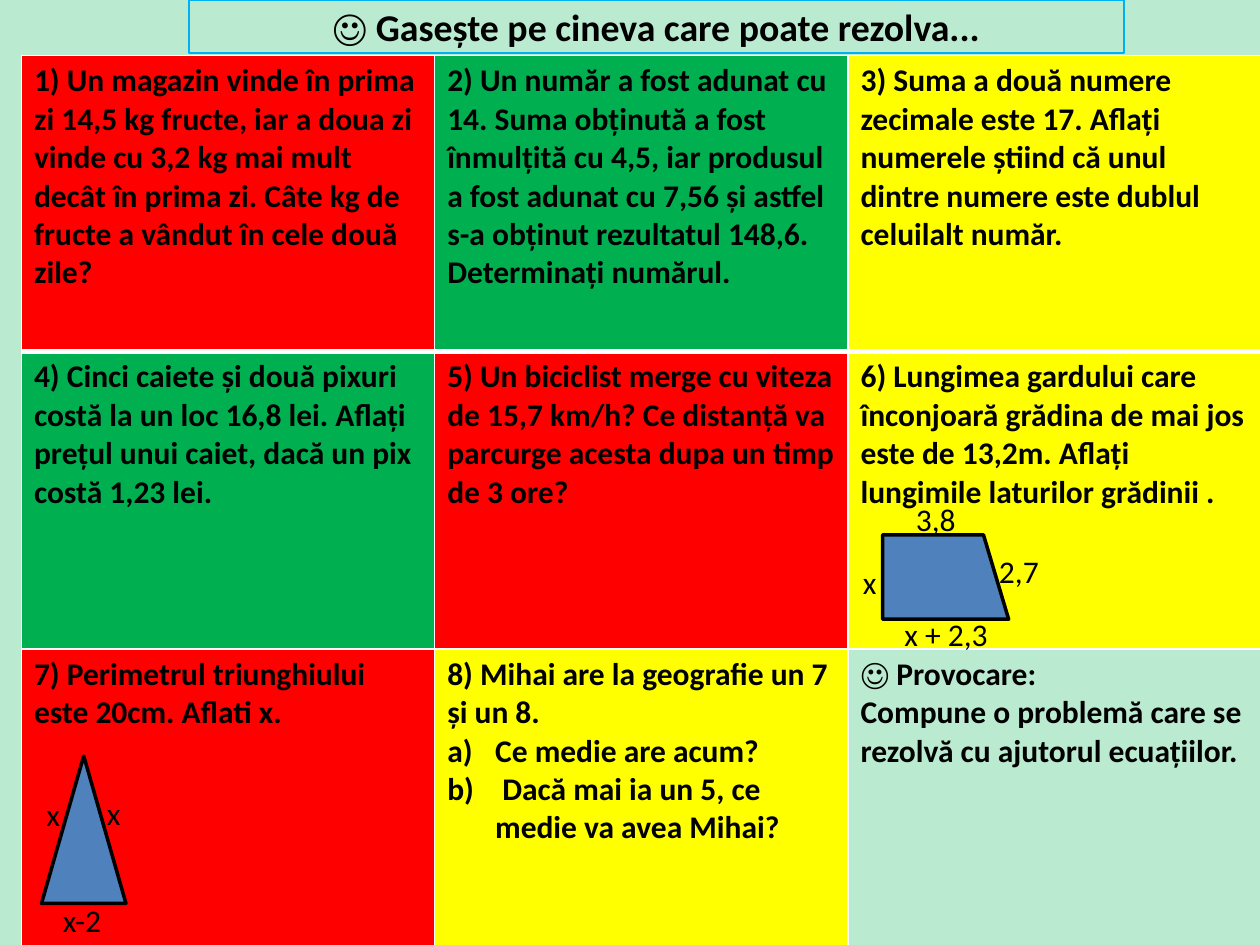
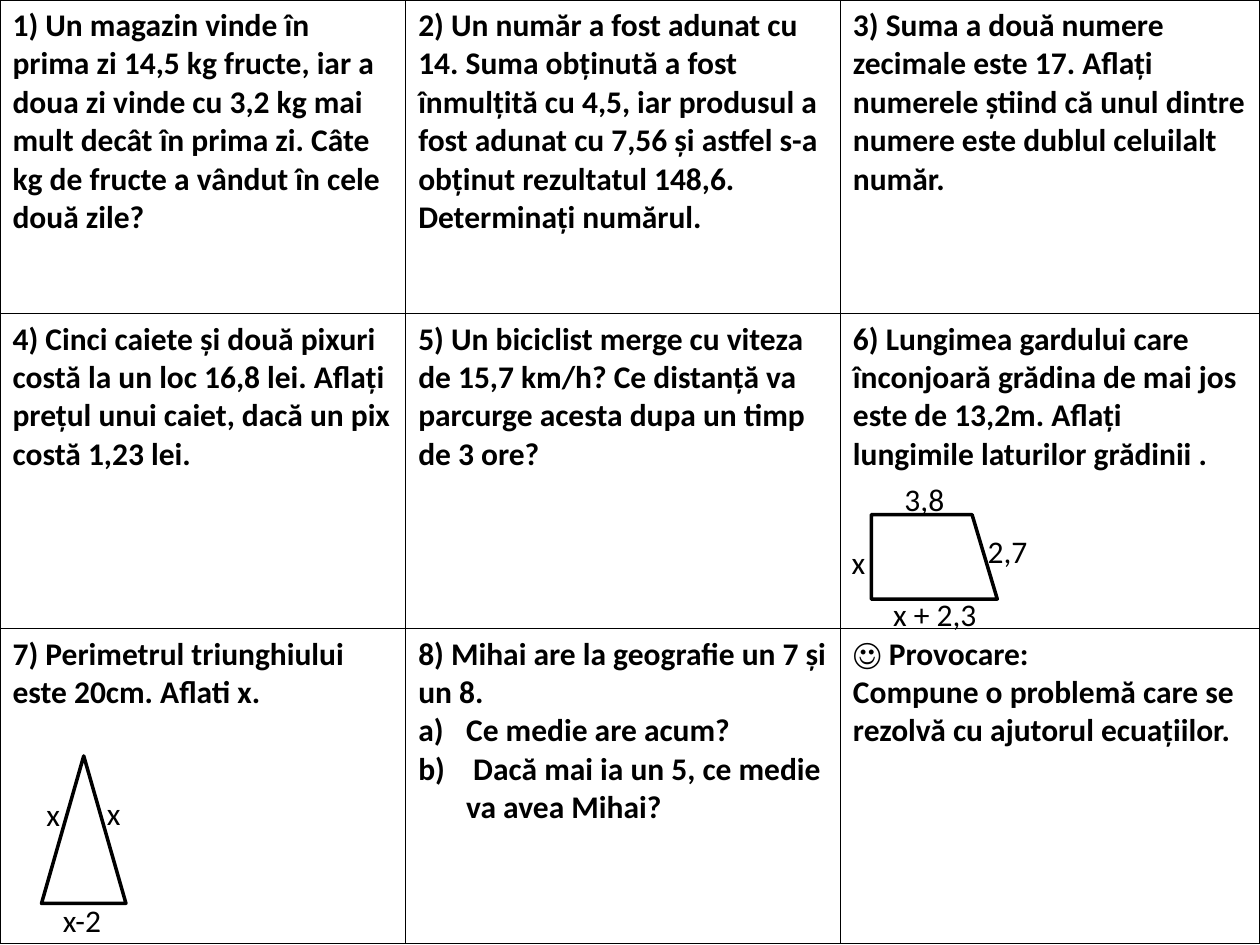
from dataclasses import dataclass
from itertools import product

from lxml.etree import SubElement
from pptx import Presentation
from pptx.dml.color import RGBColor
from pptx.enum.shapes import MSO_SHAPE as Preset
from pptx.enum.text import MSO_ANCHOR as Anchor, MSO_AUTO_SIZE as AutoSize, PP_ALIGN as Align
from pptx.oxml.ns import qn
from pptx.util import Emu, Pt

PX = 9144  # 100 px to the inch
FONT = "Calibri"
BLACK, WHITE, BLUE, SKY = "000000", "FFFFFF", "4F81BD", "00B0F0"
RED, GREEN, YELLOW, MINT = "FF0000", "00B050", "FFFF00", "BAEAD0"
LIST_INDENT = 38

TASKS = [
    ["1) Un magazin vinde în prima zi 14,5 kg fructe, iar a doua zi vinde cu 3,2 kg mai mult "
     "decât în prima zi. Câte kg de fructe a vândut în cele două zile?"],
    ["2) Un număr a fost adunat cu 14. Suma obținută a fost înmulțită cu 4,5, iar produsul a fost "
     "adunat cu 7,56 și astfel s-a obținut rezultatul 148,6. Determinați numărul."],
    ["3) Suma a două numere zecimale este 17. Aflați numerele știind că unul dintre numere este "
     "dublul celuilalt număr."],
    ["4) Cinci caiete și două pixuri costă la un loc 16,8 lei. Aflați prețul unui caiet, dacă un "
     "pix costă 1,23 lei."],
    ["5) Un biciclist merge cu viteza de 15,7 km/h? Ce distanță va parcurge acesta dupa un timp "
     "de 3 ore?"],
    ["6) Lungimea gardului care înconjoară grădina de mai jos este de 13,2m. Aflați lungimile "
     "laturilor grădinii ."],
    ["7) Perimetrul triunghiului este 20cm. Aflati x."],
    ["8) Mihai are la geografie un 7 și un 8.",
     "Ce medie are acum?",
     " Dacă mai ia un 5, ce medie va avea Mihai?"],
    ["☺ Provocare:", "Compune o problemă care se rezolvă cu ajutorul ecuațiilor."],
]
LETTERED_TASK = 7  # its paragraphs after the first are a), b)


@dataclass(frozen=True)
class Label:
    text: str
    dx: int
    dy: int
    width: int


@dataclass(frozen=True)
class Figure:
    preset: Preset
    width: int
    height: int
    rotation: int
    labels: tuple[Label, ...]


@dataclass(frozen=True)
class Board:
    """One worksheet: its grid, colours and figure places."""
    background: str
    left: int
    top: int
    columns: tuple[int, ...]
    rows: tuple[int, ...]
    fills: tuple[str | None, ...]
    border: str
    header_rule: int
    figure_fill: str | None
    garden_at: tuple[int, int]
    triangle_at: tuple[int, int] = (33, 600)


GARDEN = Figure(Preset.FLOWCHART_MANUAL_INPUT, 67, 100, 90, (
    Label("x", -42, 34, 31),
    Label("3,8", 0, -16, 52),
    Label("x + 2,3", -9, 75, 87),
    Label("2,7", 66, 25, 52),
))
TRIANGLE = Figure(Preset.ISOSCELES_TRIANGLE, 67, 117, 0, (
    Label("x", -6, 26, 31),
    Label("x", 42, 25, 31),
    Label("x-2", 7, 110, 52),
))

COLOUR_BOARD = Board(MINT, 17, 44, (328, 328, 328), (235, 236, 236),
                     (RED, GREEN, YELLOW, GREEN, RED, YELLOW, RED, YELLOW, None),
                     WHITE, 3, BLUE, (717, 408))
PRINT_BOARD = Board(WHITE, 0, 0, (322, 345, 333), (249, 250, 250),
                    (None,) * 9, BLACK, 1, None, (708, 392))


def px(length: int) -> Emu:
    return Emu(length * PX)


def colour(value: str) -> RGBColor:
    return RGBColor.from_string(value)


def paint(fill, value: str | None) -> None:
    if value is None:
        fill.background()
    else:
        fill.solid()
        fill.fore_color.rgb = colour(value)


def style(para, size: float, bold: bool = False, align=Align.LEFT) -> None:
    para.alignment = align
    font = para.font
    font.name, font.size, font.bold = FONT, Pt(size), bold
    font.color.rgb = colour(BLACK)


def letter(para) -> None:
    """Number the paragraph a), b), ... with a hanging indent."""
    props = para._p.get_or_add_pPr()
    props.set("marL", str(px(LIST_INDENT)))
    props.set("indent", str(-px(LIST_INDENT)))
    number = props.makeelement(qn("a:buAutoNum"), {"type": "alphaLcParenR"})
    props.insert(0, number)


def add_borders(cell, value: str, top: int, bottom: int) -> None:
    props = cell._tc.get_or_add_tcPr()
    for side, points in (("L", 1), ("R", 1), ("T", top), ("B", bottom)):
        line = SubElement(props, qn(f"a:ln{side}"), w=str(Pt(points)))
        solid = SubElement(line, qn("a:solidFill"))
        SubElement(solid, qn("a:srgbClr"), val=value)


def add_tasks(page, board: Board) -> None:
    frame = page.shapes.add_table(
        len(board.rows), len(board.columns), px(board.left), px(board.top),
        px(sum(board.columns)), px(sum(board.rows)))
    table = frame.table
    table.first_row = table.horz_banding = False
    for column, width in zip(table.columns, board.columns):
        column.width = px(width)
    for row, height in zip(table.rows, board.rows):
        row.height = px(height)

    places = product(range(len(board.rows)), range(len(board.columns)))
    for index, (row, column) in enumerate(places):
        cell = table.cell(row, column)
        cell.text = "\n".join(TASKS[index])
        for order, para in enumerate(cell.text_frame.paragraphs):
            style(para, 18, bold=True)
            if index == LETTERED_TASK and order:
                letter(para)
        add_borders(cell, board.border,
                    top=board.header_rule if row == 1 else 1,
                    bottom=board.header_rule if row == 0 else 1)
        paint(cell.fill, board.fills[index])


def add_figure(page, figure: Figure, at: tuple[int, int], fill: str | None) -> None:
    left, top = at
    shape = page.shapes.add_shape(
        figure.preset, px(left), px(top), px(figure.width), px(figure.height))
    shape.rotation = figure.rotation
    shape.shadow.inherit = False
    paint(shape.fill, fill)
    shape.line.color.rgb = colour(BLACK)
    shape.line.width = Pt(2)
    for label in figure.labels:
        box = page.shapes.add_textbox(
            px(left + label.dx), px(top + label.dy), px(label.width), px(40))
        box.text_frame.word_wrap = False
        box.text_frame.auto_size = AutoSize.SHAPE_TO_FIT_TEXT
        para = box.text_frame.paragraphs[0]
        para.text = label.text
        style(para, 18)


def add_title(page, text: str) -> None:
    title = page.shapes.title
    title.left, title.top, title.width, title.height = map(px, (150, 0, 742, 42))
    title.line.color.rgb = colour(SKY)
    title.line.width = Pt(0.75)
    frame = title.text_frame
    frame.text = text
    frame.auto_size = AutoSize.NONE
    frame.vertical_anchor = Anchor.MIDDLE
    style(frame.paragraphs[0], 21.6, bold=True, align=Align.CENTER)


def add_board(deck, board: Board, title: str | None = None) -> None:
    title_only, blank = deck.slide_layouts[5], deck.slide_layouts[6]
    page = deck.slides.add_slide(title_only if title else blank)
    paint(page.background.fill, board.background)
    if title:
        add_title(page, title)
    add_tasks(page, board)
    add_figure(page, GARDEN, board.garden_at, board.figure_fill)
    add_figure(page, TRIANGLE, board.triangle_at, board.figure_fill)


def main() -> None:
    deck = Presentation()
    deck.slide_width, deck.slide_height = px(1000), px(750)
    add_board(deck, COLOUR_BOARD, "☺ Gasește pe cineva care poate rezolva...")
    add_board(deck, PRINT_BOARD)
    deck.save("out.pptx")


if __name__ == "__main__":
    main()
